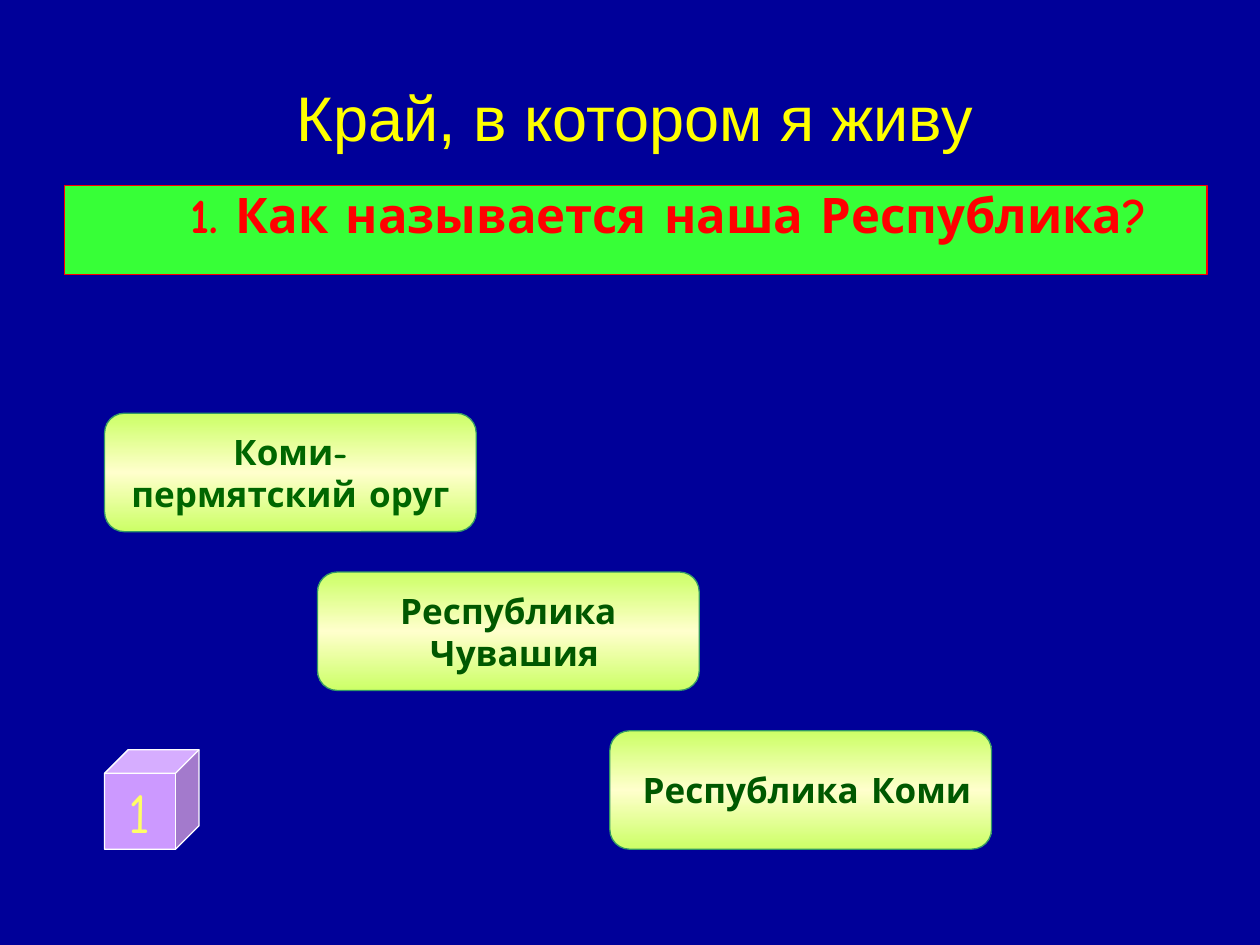
from copy import deepcopy
from dataclasses import dataclass

from pptx import Presentation
from pptx.dml.color import RGBColor
from pptx.enum.shapes import MSO_SHAPE
from pptx.enum.text import MSO_ANCHOR, PP_ALIGN
from pptx.oxml.ns import qn
from pptx.shapes.autoshape import Shape
from pptx.slide import Slide
from pptx.text.text import TextFrame
from pptx.util import Inches, Pt


@dataclass(frozen=True)
class Theme:
    background: str = "000099"
    title: str = "FFFF00"
    question: str = "FF0000"
    question_fill: str = "37FF37"
    answer_edge: str = "339966"
    answer_stops: tuple[str, ...] = ("CCFF66", "FFFFCC", "CCFF66")
    cube: str = "CC99FF"
    cube_edge: str = "FFFFFF"
    cube_number: str = "FFFF66"
    title_font: str = "Arial"
    text_font: str = "Comic Neue"
    title_size: int = 36
    question_size: int = 28
    answer_size: int = 20
    number_size: int = 32
    edge_width: float = 0.75


@dataclass(frozen=True)
class Answer:
    left: float
    width: float
    lines: tuple[str, ...]
    color: str
    wrap: bool = False


THEME = Theme()
ANSWERS = (
    Answer(0.83, 2.95, ("Коми-пермятский оруг",), "006600", wrap=True),
    Answer(2.52, 3.03, ("Республика", " Чувашия"), "005800"),
    Answer(4.84, 3.03, (" Республика Коми",), "005800"),
)
ANSWER_TOP, ANSWER_STEP, ANSWER_HEIGHT = 3.28, 1.26, 0.94


def write_lines(frame: TextFrame, lines: tuple[str, ...], size: int, color: str,
                font: str = THEME.text_font, bold: bool = False,
                align: PP_ALIGN = PP_ALIGN.CENTER) -> None:
    for index, line in enumerate(lines):
        paragraph = frame.add_paragraph() if index else frame.paragraphs[0]
        paragraph.alignment = align
        run = paragraph.add_run()
        run.text = line
        run.font.name = font
        run.font.size = Pt(size)
        run.font.bold = bold
        run.font.color.rgb = RGBColor.from_string(color)


def add_block(slide: Slide, kind: MSO_SHAPE, left: float, top: float,
              width: float, height: float, edge: str) -> Shape:
    block = slide.shapes.add_shape(
        kind, Inches(left), Inches(top), Inches(width), Inches(height))
    block.shadow.inherit = False
    block.line.color.rgb = RGBColor.from_string(edge)
    block.line.width = Pt(THEME.edge_width)
    block.text_frame.vertical_anchor = MSO_ANCHOR.MIDDLE
    return block


def fill_solid(block: Shape, color: str) -> None:
    block.fill.solid()
    block.fill.fore_color.rgb = RGBColor.from_string(color)


def fill_gradient(block: Shape, colors: tuple[str, ...]) -> None:
    block.fill.gradient()
    block.fill.gradient_angle = 90
    # The default gradient has two stops; a third is needed
    stop_list = block._element.spPr.find(qn("a:gradFill")).find(qn("a:gsLst"))
    stop_list.append(deepcopy(stop_list[-1]))
    for index, (stop, color) in enumerate(zip(block.fill.gradient_stops, colors)):
        stop.position = index / (len(colors) - 1)
        stop.color.rgb = RGBColor.from_string(color)


def add_title(slide: Slide, text: str) -> None:
    title = slide.shapes.title
    title.left, title.top = Inches(0.51), Inches(0.52)
    title.width, title.height = Inches(9.06), Inches(0.87)
    frame = title.text_frame
    frame.vertical_anchor = MSO_ANCHOR.TOP
    frame.margin_top = Inches(0.1)
    write_lines(frame, (text,), THEME.title_size, THEME.title, THEME.title_font)


def add_question(slide: Slide, text: str) -> None:
    banner = add_block(slide, MSO_SHAPE.RECTANGLE, 0.51, 1.47, 9.07, 0.71,
                       THEME.question)
    fill_solid(banner, THEME.question_fill)
    frame = banner.text_frame
    frame.vertical_anchor = MSO_ANCHOR.TOP
    frame.margin_left = Inches(1)
    frame.margin_right = 0
    write_lines(frame, (text,), THEME.question_size, THEME.question,
                bold=True, align=PP_ALIGN.LEFT)
    frame.paragraphs[0].line_spacing = 0.9


def add_answer(slide: Slide, answer: Answer, top: float) -> None:
    button = add_block(slide, MSO_SHAPE.ROUNDED_RECTANGLE, answer.left, top,
                       answer.width, ANSWER_HEIGHT, THEME.answer_edge)
    fill_gradient(button, THEME.answer_stops)
    button.text_frame.word_wrap = answer.wrap
    write_lines(button.text_frame, answer.lines, THEME.answer_size,
                answer.color, bold=True)


def add_number_cube(slide: Slide, number: str) -> None:
    cube = add_block(slide, MSO_SHAPE.CUBE, 0.83, 5.95, 0.75, 0.79,
                     THEME.cube_edge)
    fill_solid(cube, THEME.cube)
    cube.text_frame.word_wrap = False
    write_lines(cube.text_frame, (number,), THEME.number_size, THEME.cube_number)


def main() -> None:
    presentation = Presentation()
    presentation.slide_width, presentation.slide_height = Inches(10), Inches(7.5)
    slide = presentation.slides.add_slide(presentation.slide_layouts[5])
    slide.background.fill.solid()
    slide.background.fill.fore_color.rgb = RGBColor.from_string(THEME.background)

    # Heading and question
    add_title(slide, "Край, в котором я живу")
    add_question(slide, "1. Как называется наша Республика?")

    # Answers step down the slide
    for row, answer in enumerate(ANSWERS):
        add_answer(slide, answer, ANSWER_TOP + row * ANSWER_STEP)

    # Question number
    add_number_cube(slide, "1")
    presentation.save("out.pptx")


if __name__ == "__main__":
    main()
